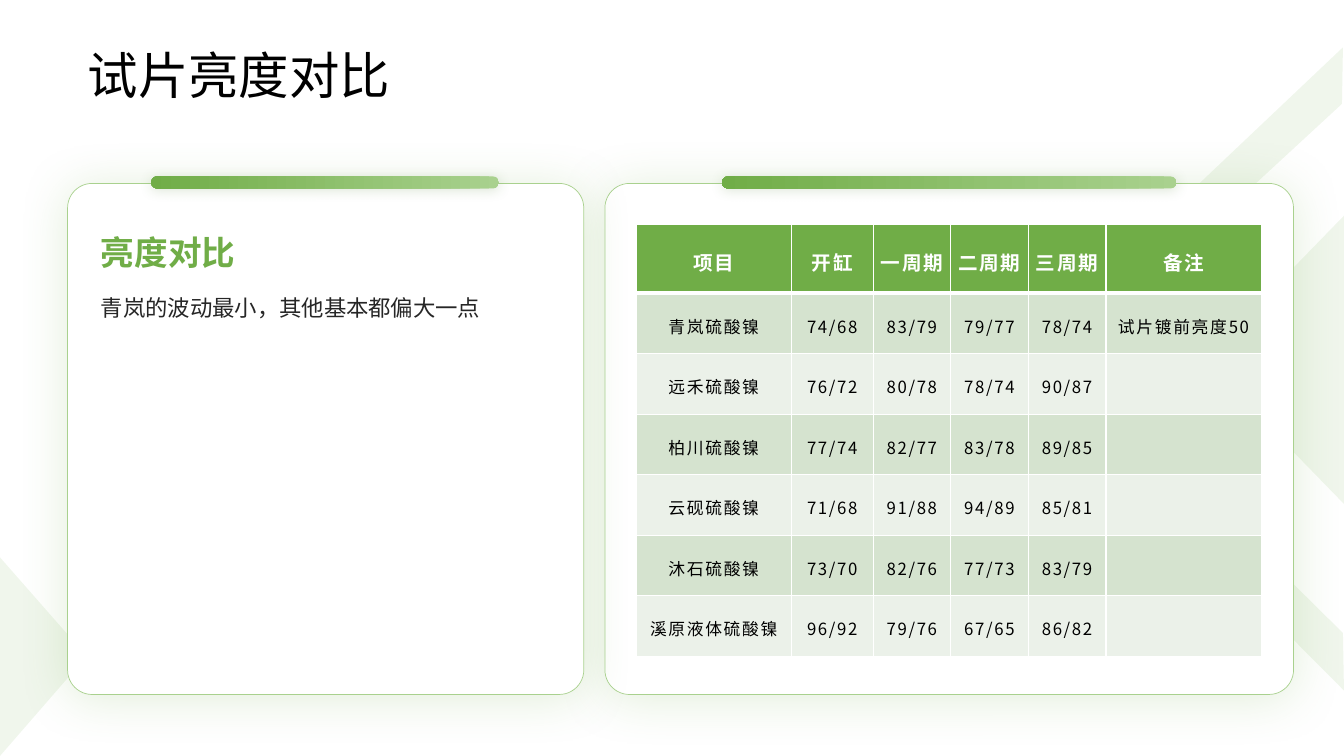
"""Build the test-panel brightness comparison slide."""
import pptx
import pptx.dml.color
import pptx.enum.shapes
import pptx.enum.text
import pptx.oxml.ns
import pptx.util
from lxml import etree

Inches = pptx.util.Inches
Pt = pptx.util.Pt
RGB = pptx.dml.color.RGBColor.from_string
qn = pptx.oxml.ns.qn
ROUNDED = pptx.enum.shapes.MSO_SHAPE.ROUNDED_RECTANGLE
ANCHOR = pptx.enum.text.MSO_ANCHOR
ALIGN = pptx.enum.text.PP_ALIGN

THEME = {
    "font": "Noto Sans CJK SC",
    "green": "70AD47",
    "pale_green": "A9D18E",
    "deep_green": "548235",
    "white": "FFFFFF",
    "bands": ("EBF1E9", "D5E3CF"),
    "title": {"color": "000000", "font": {"size": Pt(36), "bold": False}, "spacing": 1.11},
    "heading": {"color": "70AD47", "font": {"size": Pt(24), "bold": True}, "spacing": 1.0},
    "remark": {"color": "262626", "font": {"size": Pt(16), "bold": False}, "spacing": 1.5},
    "table_head": {"color": "FFFFFF", "font": {"size": Pt(14), "bold": True},
                   "spacing": 1.2, "align": ALIGN.CENTER, "tracking": "120"},
    "table_body": {"color": "000000", "font": {"size": Pt(12), "bold": False},
                   "spacing": 1.2, "align": ALIGN.CENTER, "tracking": "120"},
}


def write_text(frame, text, style):
    paragraph = frame.paragraphs[0]
    paragraph_format = {"alignment": style.get("align", ALIGN.LEFT),
                        "line_spacing": style["spacing"], "space_before": Pt(0)}
    for attribute, value in paragraph_format.items():
        setattr(paragraph, attribute, value)
    run = paragraph.add_run()
    run.text = text
    for attribute, value in style["font"].items():
        setattr(run.font, attribute, value)
    run.font.color.rgb = RGB(style["color"])
    run.font.name = THEME["font"]
    properties = run.font._element
    etree.SubElement(properties, qn("a:ea"), typeface=THEME["font"])
    properties.set("spc", style.get("tracking", "0"))


def add_rounded(box, radius, shadow_color, blur, distance):
    shape = slide.shapes.add_shape(ROUNDED, *map(Inches, box))
    shape.adjustments[0] = radius
    shape.shadow.inherit = False
    effects = shape._element.spPr.find(qn("a:effectLst"))
    shadow = etree.SubElement(effects, qn("a:outerShdw"), blurRad=str(Pt(blur)),
                              dist=str(Pt(distance)), dir="5400000", algn="t", rotWithShape="0")
    color = etree.SubElement(shadow, qn("a:srgbClr"), val=shadow_color)
    etree.SubElement(color, qn("a:alpha"), val="20000")
    return shape


presentation = pptx.Presentation()
presentation.slide_width = Inches(13.33)
presentation.slide_height = Inches(7.5)
slide = presentation.slides.add_slide(presentation.slide_layouts[4])
for spare in list(slide.placeholders)[3:]:
    spare._element.getparent().remove(spare._element)

ribbons = [
    [(13.32, 0.47), (13.31, 1.03), (10.57, 3.56), (13.32, 6.28), (13.33, 6.85), (10.06, 3.56)],
    [(13.33, 2.14), (13.33, 5), (11.94, 3.57)],
    [(0, 5.53), (0, 7.5), (0.86, 6.51)],
]
for corners in ribbons:
    points = [(Inches(x), Inches(y)) for x, y in corners]
    outline = slide.shapes.build_freeform(*points[0])
    outline.add_line_segments(points[1:], close=True)
    ribbon = outline.convert_to_shape()
    ribbon.shadow.inherit = False
    ribbon.line.fill.background()
    ribbon.fill.solid()
    ribbon.fill.fore_color.rgb = RGB(THEME["green"])
    tint = ribbon._element.spPr.find(".//" + qn("a:srgbClr"))
    etree.SubElement(tint, qn("a:alpha"), val="10000")

panels = [
    ((6, 1.82, 6.83, 5.07), (7.16, 1.75, 4.51, 0.12)),
    ((0.67, 1.82, 5.12, 5.07), (1.5, 1.75, 3.45, 0.12)),
]
for card_box, bar_box in panels:
    card = add_rounded(card_box, 0.048, THEME["green"], 36, 3)
    card.fill.solid()
    card.fill.fore_color.rgb = RGB(THEME["white"])
    card.line.color.rgb = RGB(THEME["pale_green"])
    card.line.width = Pt(0.5)
    bar = add_rounded(bar_box, 0.5, THEME["deep_green"], 9, 1)
    bar.line.fill.background()
    bar.fill.gradient()
    bar.fill.gradient_angle = 180
    for stop, name in zip(bar.fill.gradient_stops, ("pale_green", "green")):
        stop.color.rgb = RGB(THEME[name])

texts = [
    ("title", "试片亮度对比", (0.87, 0.37, 11.6, 0.67), ANCHOR.MIDDLE),
    ("heading", "亮度对比", (1, 2.22, 4.45, 0.48), ANCHOR.BOTTOM),
    ("remark", "青岚的波动最小，其他基本都偏大一点", (1, 2.78, 4.45, 3.71), ANCHOR.TOP),
]
for placeholder, (style, text, box, anchor) in zip(list(slide.placeholders), texts):
    for side, value in zip(("left", "top", "width", "height"), box):
        setattr(placeholder, side, Inches(value))
    frame = placeholder.text_frame
    frame_format = {"margin_left": 0, "margin_top": 0, "margin_right": 0, "margin_bottom": 0,
                    "word_wrap": True, "vertical_anchor": anchor,
                    "auto_size": pptx.enum.text.MSO_AUTO_SIZE.NONE}
    for attribute, value in frame_format.items():
        setattr(frame, attribute, value)
    indents = frame.paragraphs[0]._p.get_or_add_pPr()
    indents.set("marL", "0")
    indents.set("indent", "0")
    etree.SubElement(indents, qn("a:buNone"))
    write_text(frame, text, THEME[style])
    placeholder._element.getparent().append(placeholder._element)

readings = [
    ("项目", "开缸", "一周期", "二周期", "三周期", "备注"),
    ("青岚硫酸镍", "74/68", "83/79", "79/77", "78/74", "试片镀前亮度50"),
    ("远禾硫酸镍", "76/72", "80/78", "78/74", "90/87", ""),
    ("柏川硫酸镍", "77/74", "82/77", "83/78", "89/85", ""),
    ("云砚硫酸镍", "71/68", "91/88", "94/89", "85/81", ""),
    ("沐石硫酸镍", "73/70", "82/76", "77/73", "83/79", ""),
    ("溪原液体硫酸镍", "96/92", "79/76", "67/65", "86/82", ""),
]
brightness = slide.shapes.add_table(len(readings), len(readings[0]), Inches(6.31), Inches(2.23),
                                    Inches(6.2), Inches(4.28)).table
brightness.horz_banding = False
for column, width in zip(brightness.columns, (1.54, 0.81, 0.77, 0.77, 0.77, 1.54)):
    column.width = Inches(width)
for row_index, values in enumerate(readings):
    is_head = row_index == 0
    brightness.rows[row_index].height = Inches(0.68 if is_head else 0.6)
    borders = {"a:lnL": 1, "a:lnR": 1, "a:lnT": 3 if row_index == 1 else 1,
               "a:lnB": 3 if is_head else 1}
    for column_index, value in enumerate(values):
        cell = brightness.cell(row_index, column_index)
        for side in ("left", "top", "right", "bottom"):
            setattr(cell, "margin_" + side, Inches(0.03))
        cell.vertical_anchor = ANCHOR.MIDDLE
        for tag, weight in borders.items():
            border = etree.SubElement(cell._tc.get_or_add_tcPr(), qn(tag), w=str(Pt(weight)))
            paint = etree.SubElement(border, qn("a:solidFill"))
            etree.SubElement(paint, qn("a:srgbClr"), val=THEME["white"])
        cell.fill.solid()
        cell.fill.fore_color.rgb = RGB(THEME["green"] if is_head else THEME["bands"][row_index % 2])
        if value:
            write_text(cell.text_frame, value, THEME["table_head" if is_head else "table_body"])

presentation.save("out.pptx")
